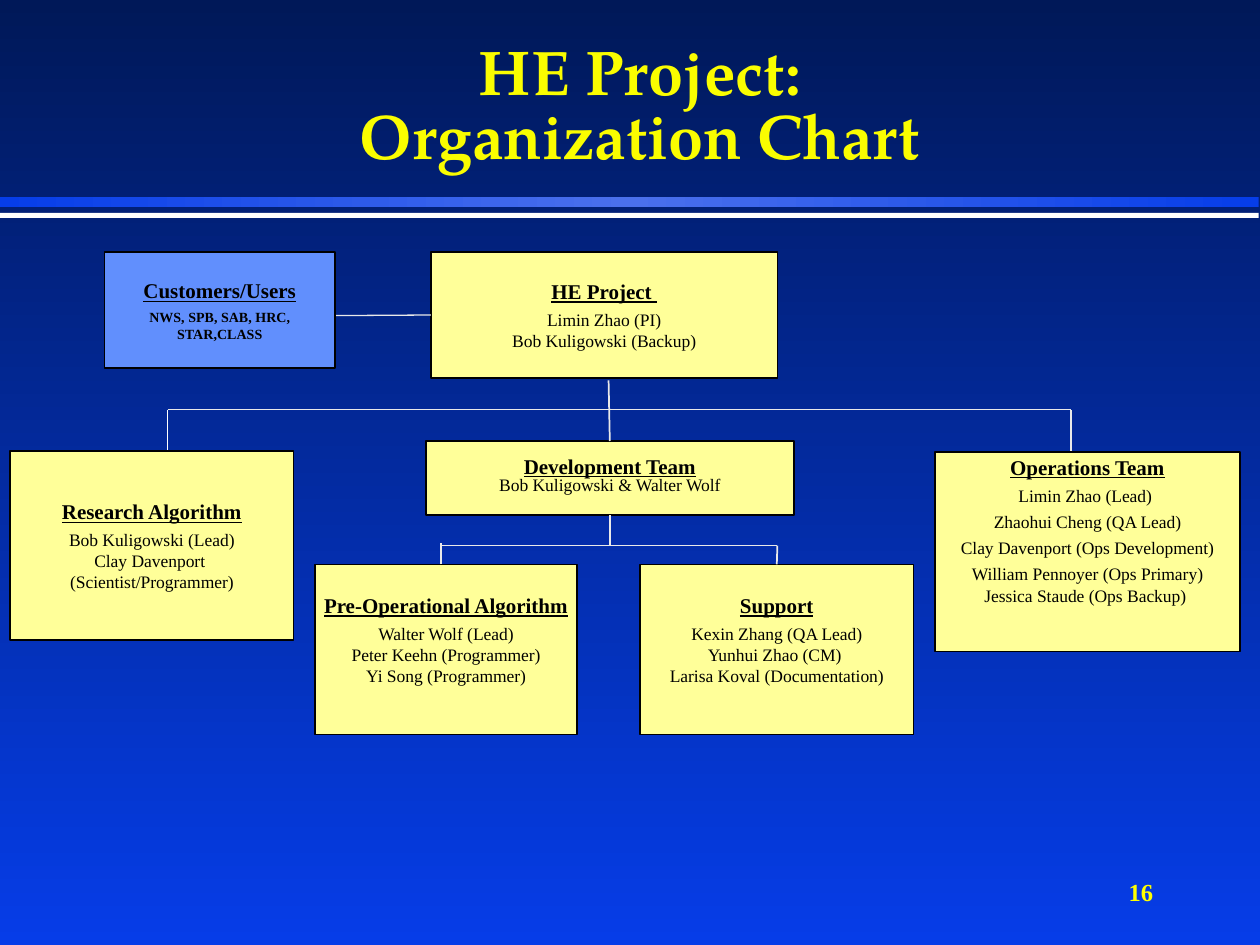
import copy

import pptx
import pptx.dml.color
import pptx.enum.shapes
import pptx.enum.text
import pptx.oxml.ns
import pptx.util
from pptx.util import Inches, Pt

SERIF = "Times New Roman"
CREAM = "FFFF99"
PALE = "E9E9E9"
ALIGN = pptx.enum.text.PP_ALIGN
ANCHOR = pptx.enum.text.MSO_ANCHOR
SHAPE = pptx.enum.shapes.MSO_SHAPE


def rgb(value):
    return pptx.dml.color.RGBColor.from_string(value)


def paint_gradient(fill, owner, colours, angle):
    fill.gradient()
    fill.gradient_angle = angle
    stop_list = owner.xpath(".//a:gsLst")[0]
    while len(stop_list) < len(colours):
        stop_list.append(copy.deepcopy(stop_list[-1]))
    for index, (stop, colour) in enumerate(zip(fill.gradient_stops, colours)):
        stop.position = index / (len(colours) - 1)
        stop.color.rgb = rgb(colour)


def format_paragraph(paragraph, size, colour, font=SERIF, bold=False,
                     underline=False, align=ALIGN.CENTER):
    paragraph.alignment = align
    for run in paragraph.runs:
        run.font.name = font
        run.font.size = Pt(size)
        run.font.bold = bold
        run.font.underline = underline
        run.font.color.rgb = rgb(colour)


def add_band(slide, top, height):
    band = slide.shapes.add_shape(
        SHAPE.RECTANGLE, 0, Inches(top), Inches(9.99), Inches(height))
    band.shadow.inherit = False
    band.line.fill.background()
    return band


def add_label(slide, place, text, anchor, **style):
    label = slide.shapes.add_textbox(*map(Inches, place))
    frame = label.text_frame
    frame.word_wrap = True
    frame.vertical_anchor = anchor
    frame.text = text
    format_paragraph(frame.paragraphs[0], bold=True, **style)
    return frame.paragraphs[0]


def add_team(slide, place, heading, members, fill=CREAM, size=10,
             bold=False, spaced=1, bottom=0.01):
    team = slide.shapes.add_shape(
        SHAPE.FLOWCHART_PROCESS, *map(Inches, place))
    team.shadow.inherit = False
    team.fill.solid()
    team.fill.fore_color.rgb = rgb(fill)
    team.line.color.rgb = rgb("000000")
    team.line.width = Pt(1)
    frame = team.text_frame
    frame.word_wrap = True
    frame.vertical_anchor = ANCHOR.MIDDLE
    frame.margin_left = frame.margin_right = frame.margin_top = Inches(0.01)
    frame.margin_bottom = Inches(bottom)
    frame.text = "\n".join([heading, *members])
    for index, paragraph in enumerate(frame.paragraphs):
        if index == 0:
            format_paragraph(paragraph, 12, "000000", bold=True, underline=True)
        else:
            format_paragraph(paragraph, size, "000000", bold=bold)
        if index < spaced:
            paragraph.space_after = Pt(3)
    return team


def add_link(slide, start, end, colour=PALE, width=1):
    link = slide.shapes.add_connector(
        pptx.enum.shapes.MSO_CONNECTOR.STRAIGHT, *map(Inches, start + end))
    link.line.color.rgb = rgb(colour)
    link.line.width = Pt(width)
    properties = link._element.spPr
    properties.append(properties.makeelement(
        pptx.oxml.ns.qn("a:effectLst"), {}))
    return link


def add_backdrop(slide):
    paint_gradient(slide.background.fill, slide._element,
                   ["001858", "063DE8"], 270)
    blue_band = add_band(slide, 1.56, 0.08)
    paint_gradient(blue_band.fill, blue_band._element,
                   ["063DE8", "4A70EC", "063DE8"], 0)
    white_band = add_band(slide, 1.69, 0.04)
    white_band.fill.solid()
    white_band.fill.fore_color.rgb = rgb("FFFFFF")


def add_organization(slide):
    development = add_team(
        slide, (3.38, 3.5, 2.92, 0.59), "Development Team",
        ["Bob Kuligowski & Walter Wolf"], spaced=0)
    for paragraph in development.text_frame.paragraphs:
        paragraph.line_spacing = 0.6
    development.text_frame.paragraphs[1].space_before = Pt(2.5)
    add_team(slide, (2.5, 4.48, 2.08, 1.35), "Pre-Operational Algorithm",
             ["Walter Wolf (Lead)", "Peter Keehn (Programmer)",
              "Yi Song (Programmer)"], bottom=0.17)
    project = add_team(slide, (3.42, 2, 2.75, 1), "HE Project ",
                       ["Limin Zhao (PI)", "Bob Kuligowski (Backup)"])
    support = add_team(
        slide, (5.08, 4.48, 2.17, 1.35), "Support",
        ["Kexin Zhang (QA Lead)", "Yunhui Zhao (CM) ",
         "Larisa Koval (Documentation)"], bottom=0.17)

    add_link(slide, (4.83, 3.02), (4.84, 3.5)).end_connect(development, 0)
    add_link(slide, (1.83, 2.51), (3.42, 2.5), width=0.75).end_connect(project, 1)
    add_link(slide, (3.5, 4.48), (3.5, 4.31))
    add_link(slide, (6.17, 4.48), (6.17, 4.33)).begin_connect(support, 0)
    add_link(slide, (3.5, 4.33), (6.17, 4.33))
    add_link(slide, (4.84, 4.09), (4.84, 4.33)).begin_connect(development, 2)
    add_link(slide, (1.33, 3.25), (8.5, 3.25))
    add_link(slide, (8.5, 3.59), (8.5, 3.25))
    add_link(slide, (1.33, 3.58), (1.33, 3.25), colour="FFFFFF")

    add_team(slide, (0.83, 2, 1.83, 0.92), "Customers/Users",
             ["NWS, SPB, SAB, HRC,", "STAR,CLASS"],
             fill="618FFD", size=8, bold=True)
    add_team(slide, (7.42, 3.59, 2.42, 1.58), "Operations Team",
             ["Limin Zhao (Lead) ", "Zhaohui Cheng (QA Lead)",
              "Clay Davenport (Ops Development)",
              "William Pennoyer (Ops Primary)",
              "Jessica Staude (Ops Backup) "], spaced=4, bottom=0.36)
    add_team(slide, (0.08, 3.58, 2.25, 1.5), "Research Algorithm",
             ["Bob Kuligowski (Lead)", "Clay Davenport ",
              "(Scientist/Programmer)"])


def main():
    deck = pptx.Presentation()
    deck.slide_width, deck.slide_height = Inches(10), Inches(7.5)
    slide = deck.slides.add_slide(deck.slide_layouts[6])
    add_backdrop(slide)
    add_label(slide, (7.17, 6.83, 2.08, 0.5), "16", ANCHOR.MIDDLE,
              size=14, colour="FFFF00", align=ALIGN.RIGHT)
    add_organization(slide)
    title = add_label(slide, (1.08, 0.17, 8, 1.25),
                      "HE Project:\vOrganization Chart", ANCHOR.BOTTOM,
                      size=36, colour="FAFD00", font="TeX Gyre Pagella")
    title.line_spacing = 0.85
    deck.save("out.pptx")


if __name__ == "__main__":
    main()
